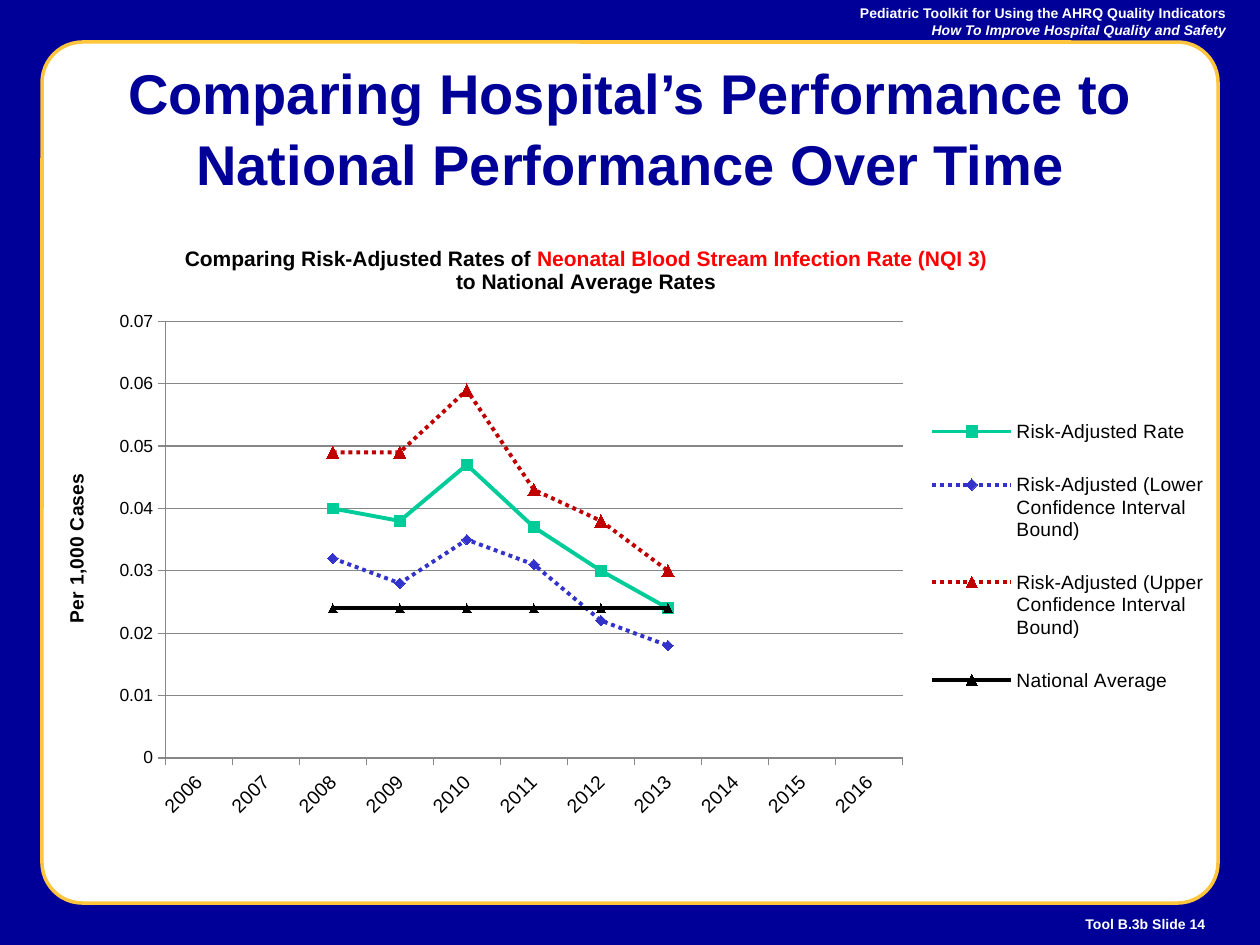
from lxml.etree import SubElement
from pptx import Presentation
from pptx.chart.data import CategoryChartData
from pptx.dml.color import RGBColor
from pptx.enum.chart import (
    XL_CHART_TYPE as ChartType,
    XL_LEGEND_POSITION as LegendPosition,
    XL_MARKER_STYLE as Marker,
    XL_TICK_MARK as TickMark,
)
from pptx.enum.dml import MSO_LINE_DASH_STYLE as Dash
from pptx.enum.shapes import MSO_SHAPE as Shape
from pptx.enum.text import MSO_ANCHOR as Anchor, PP_ALIGN as Align
from pptx.oxml.ns import qn
from pptx.util import Emu, Pt

PX = 914400 / 126  # EMU in one px
FONT = "Arial"
COLORS = {
    "navy": "000099", "gold": "FFC53D", "white": "FFFFFF", "black": "000000",
    "red": "FF0000", "grid": "878787", "rate": "00CC99", "lower": "3333CC",
    "upper": "C00000",
}
YEARS = [str(year) for year in range(2006, 2017)]
FIRST_DATA_YEAR, LAST_DATA_YEAR = "2008", "2013"
# name, values 2008-2013, color, marker, marker size, dash
SERIES = [
    ("Risk-Adjusted Rate", [0.040, 0.038, 0.047, 0.037, 0.030, 0.024],
     "rate", Marker.SQUARE, 6, Dash.SOLID),
    ("Risk-Adjusted (Lower Confidence Interval Bound)",
     [0.032, 0.028, 0.035, 0.031, 0.022, 0.018],
     "lower", Marker.DIAMOND, 6, Dash.ROUND_DOT),
    ("Risk-Adjusted (Upper Confidence Interval Bound)",
     [0.049, 0.049, 0.059, 0.043, 0.038, 0.030],
     "upper", Marker.TRIANGLE, 7, Dash.ROUND_DOT),
    ("National Average", [0.024] * 6,
     "black", Marker.TRIANGLE, 5, Dash.SOLID),
]


def color(name):
    return RGBColor.from_string(COLORS[name])


def to_emu(*lengths):
    return [Emu(round(length * PX)) for length in lengths]


def style_font(font, size, name, bold=False, italic=False):
    font.name, font.size, font.bold, font.italic = FONT, Pt(size), bold, italic
    font.color.rgb = color(name)


def add_span(para, text, size, name, bold=True, italic=False):
    span = para.add_run()
    span.text = text
    style_font(span.font, size, name, bold, italic)


def add_panel(page, kind, box, fill):
    panel = page.shapes.add_shape(kind, *to_emu(*box))
    panel.shadow.inherit = False
    panel.fill.solid()
    panel.fill.fore_color.rgb = color(fill)
    panel.line.fill.background()
    return panel


def add_caption(page, box, lines):
    """Right-aligned small print; lines holds (text, italic) pairs."""
    frame = page.shapes.add_textbox(*to_emu(*box)).text_frame
    frame.word_wrap = True
    frame.vertical_anchor = Anchor.MIDDLE
    for index, (text, italic) in enumerate(lines):
        para = frame.add_paragraph() if index else frame.paragraphs[0]
        para.alignment = Align.RIGHT
        add_span(para, text, 8, "white", italic=italic)


def add_frame(page, box):
    left, top, width, height = box
    add_panel(page, Shape.RECTANGLE, box, "navy")
    panel = add_panel(page, Shape.ROUNDED_RECTANGLE,
                      (left + 42, top + 42, width - 84, height - 84), "white")
    panel.adjustments[0] = 0.047
    panel.line.color.rgb = color("gold")
    panel.line.width = Pt(2)
    add_caption(page, (left + 21, top, width - 42, 42), [
        ("Pediatric Toolkit for Using the AHRQ Quality Indicators", False),
        ("How To Improve Hospital Quality and Safety", True),
    ])
    add_caption(page, (left + 21, top + height - 42, width - 63, 42),
                [("Tool B.3b Slide 14", False)])


def place_title(page, box):
    title = page.shapes.title
    title.left, title.top, title.width, title.height = to_emu(*box)
    frame = title.text_frame
    frame.word_wrap = True
    frame.vertical_anchor = Anchor.MIDDLE
    para = frame.paragraphs[0]
    para.alignment = Align.CENTER
    para.line_spacing = 1.05
    add_span(para, "Comparing Hospital’s Performance to National Performance Over Time",
             32, "navy")
    # Bring the title in front of the frame
    title.element.getparent().append(title.element)


def set_layout(part, inner=False, **fractions):
    """Place a chart part by fractions (x, y, w, h) of the chart."""
    for old in part.findall(qn("c:layout")):
        part.remove(old)
    layout = SubElement(part, qn("c:layout"))
    manual = SubElement(layout, qn("c:manualLayout"))
    if inner:
        SubElement(manual, qn("c:layoutTarget")).set("val", "inner")
    for key in ("x", "y"):
        SubElement(manual, qn(f"c:{key}Mode")).set("val", "edge")
    for key, value in fractions.items():
        SubElement(manual, qn(f"c:{key}")).set("val", str(value))
    # The layout follows the text or legend position, else it comes first
    before = [part.find(qn(tag)) for tag in ("c:tx", "c:legendPos")]
    part.insert(sum(item is not None for item in before), layout)


def style_axis(axis, size):
    axis.major_tick_mark = TickMark.OUTSIDE
    axis.minor_tick_mark = TickMark.NONE
    axis.format.line.color.rgb = color("grid")
    axis.format.line.width = Pt(0.75)
    style_font(axis.tick_labels.font, size, "black")


def style_series(series, name, marker, size, dash):
    series.smooth = False
    line = series.format.line
    line.color.rgb = color(name)
    line.width = Pt(2.25)
    line.dash_style = dash
    series.marker.style, series.marker.size = marker, size
    mark = series.marker.format
    mark.fill.solid()
    mark.fill.fore_color.rgb = color(name)
    mark.line.color.rgb = color(name)


def add_rate_chart(page, box):
    data = CategoryChartData()
    data.categories = YEARS
    lead = [None] * YEARS.index(FIRST_DATA_YEAR)
    tail = [None] * (len(YEARS) - 1 - YEARS.index(LAST_DATA_YEAR))
    for name, values, *_ in SERIES:
        data.add_series(name, lead + values + tail)
    chart = page.shapes.add_chart(ChartType.LINE_MARKERS, *to_emu(*box), data).chart
    style_font(chart.font, 10, "black")
    chart.plots[0].vary_by_categories = False
    for series, (_, _, *look) in zip(chart.plots[0].series, SERIES):
        style_series(series, *look)

    # Chart title
    frame = chart.chart_title.text_frame
    para = frame.paragraphs[0]
    add_span(para, "Comparing Risk-Adjusted Rates of ", 12, "black")
    add_span(para, "Neonatal Blood Stream Infection Rate (NQI 3)", 12, "red")
    add_span(frame.add_paragraph(), "to National Average Rates", 12, "black")
    set_layout(chart.chart_title.element, x=0.13, y=0.01)

    # Axes
    years, rates = chart.category_axis, chart.value_axis
    style_axis(years, 11)
    for body in years.tick_labels.font and chart.element.xpath(".//c:catAx/c:txPr/a:bodyPr"):
        body.set("rot", "-2700000")
    style_axis(rates, 10)
    rates.minimum_scale, rates.maximum_scale, rates.major_unit = 0, 0.07, 0.01
    rates.tick_labels.number_format = "General"
    rates.tick_labels.number_format_is_linked = False
    rates.major_gridlines.format.line.color.rgb = color("grid")
    rates.major_gridlines.format.line.width = Pt(0.75)
    add_span(rates.axis_title.text_frame.paragraphs[0], "Per 1,000 Cases", 11, "black")
    set_layout(rates.axis_title.element, x=0.03, y=0.38)

    # Legend and plot area
    chart.has_legend = True
    chart.legend.position = LegendPosition.RIGHT
    chart.legend.include_in_layout = False
    style_font(chart.legend.font, 11, "black")
    set_layout(chart.element.find(".//" + qn("c:legend")), x=0.74, y=0.25, w=0.24, h=0.54)
    set_layout(chart.element.find(".//" + qn("c:plotArea")), inner=True,
               x=0.117, y=0.139, w=0.607, h=0.71)


def main():
    deck = Presentation()
    deck.slide_width, deck.slide_height = to_emu(1260, 945)
    page = deck.slides.add_slide(deck.slide_layouts[5])
    add_frame(page, (0, 0, 1260, 945))
    place_title(page, (95, 63, 1071, 126))
    add_rate_chart(page, (23, 236, 1215, 615))
    deck.save("out.pptx")


if __name__ == "__main__":
    main()
